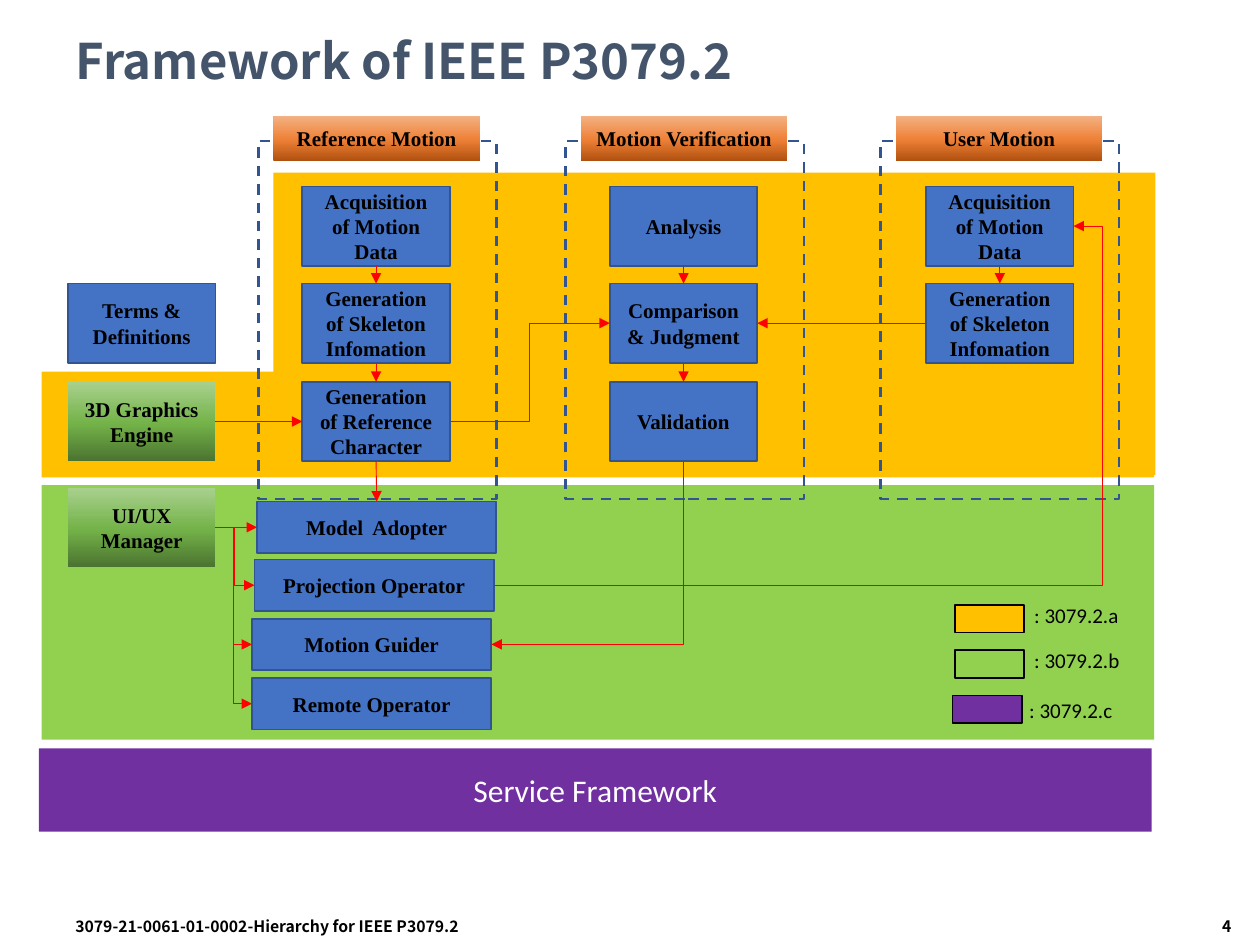
from copy import deepcopy
from dataclasses import dataclass

from lxml import etree
from pptx import Presentation
from pptx.dml.color import RGBColor
from pptx.enum.dml import MSO_LINE
from pptx.enum.shapes import MSO_CONNECTOR as CONN, MSO_SHAPE as SHAPE
from pptx.enum.text import MSO_ANCHOR as ANCHOR, PP_ALIGN as ALIGN
from pptx.oxml.ns import qn
from pptx.util import Inches, Pt

SERIF, SANS, CJK = "Times New Roman", "Calibri", "Noto Sans CJK KR"
AMBER, LIME, PURPLE, BLUE, NAVY = "FFC000", "92D050", "7030A0", "4472C4", "325491"
BLACK, WHITE, RED, SLATE = "000000", "FFFFFF", "FF0000", "44546A"
GREEN_FADE = ("4B7430", "74B349", "A9D18E")
ORANGE_FADE = ("B0500F", "EE8137", "F4B183")
TOP, LEFT, BOTTOM, RIGHT = range(4)

# Columns and rows of the diagram
SIDE, REF, VERIFY, USER = 0.54, 2.4, 4.84, 7.35
ROWS = (1.48, 2.25, 3.03)
STEP_W, STEP_H = 1.17, 0.63
OP_W, OP_H = 1.9, 0.41


@dataclass
class Box:
    key: str
    text: str
    x: float
    y: float
    w: float = STEP_W
    h: float = STEP_H
    fade: tuple = ()


@dataclass
class Link:
    start: str
    out: int
    end: str
    into: int
    bent: bool = False
    bend: float = 0.5


BOXES = [
    Box("terms", "Terms & Definitions", SIDE, ROWS[1]),
    Box("engine", "3D Graphics Engine", SIDE, ROWS[2], fade=GREEN_FADE),
    Box("manager", "UI/UX Manager", SIDE, 3.87, fade=GREEN_FADE),
    Box("ref data", "Acquisition of Motion Data", REF, ROWS[0]),
    Box("ref bones", "Generation of Skeleton Infomation", REF, ROWS[1]),
    Box("figure", "Generation of Reference Character", REF, ROWS[2]),
    Box("study", "Analysis", VERIFY, ROWS[0]),
    Box("judge", "Comparison & Judgment", VERIFY, ROWS[1]),
    Box("valid", "Validation", VERIFY, ROWS[2]),
    Box("user data", "Acquisition of Motion Data", USER, ROWS[0]),
    Box("user bones", "Generation of Skeleton Infomation", USER, ROWS[1]),
    Box("model", "Model  Adopter", 2.04, 3.98, OP_W, OP_H),
    Box("project", "Projection Operator", 2.02, 4.44, OP_W, OP_H),
    Box("guide", "Motion Guider", 2, 4.91, OP_W, OP_H),
    Box("remote", "Remote Operator", 2, 5.38, OP_W, OP_H),
]
LINKS = [
    Link("ref data", BOTTOM, "ref bones", TOP),
    Link("ref bones", BOTTOM, "figure", TOP),
    Link("figure", BOTTOM, "model", TOP),
    Link("study", BOTTOM, "judge", TOP),
    Link("judge", BOTTOM, "valid", TOP),
    Link("user data", BOTTOM, "user bones", TOP),
    Link("user bones", LEFT, "judge", RIGHT),
    Link("engine", RIGHT, "figure", LEFT),
    Link("manager", RIGHT, "model", LEFT),
    Link("manager", RIGHT, "project", LEFT, True),
    Link("manager", RIGHT, "guide", LEFT, True),
    Link("manager", RIGHT, "remote", LEFT, True),
    Link("figure", RIGHT, "judge", LEFT, True),
    Link("project", RIGHT, "user data", RIGHT, True, 1.05),
]
HEADS = [("Reference Motion", 2.17, 2.05), ("Motion Verification", 4.61, 4.49),
         ("User Motion", 7.11, 6.99)]
KEYS = [(": 3079.2.a", AMBER, 7.58, 4.8, 8.11, 4.73),
        (": 3079.2.b", LIME, 7.58, 5.16, 8.11, 5.09),
        (": 3079.2.c", PURPLE, 7.56, 5.52, 8.07, 5.49)]

prs = Presentation()
prs.slide_width, prs.slide_height = Inches(10), Inches(7.5)
slide = prs.slides.add_slide(prs.slide_layouts[5])
shapes = slide.shapes


def rgb(code: str) -> RGBColor:
    return RGBColor.from_string(code)


def write(shape, text: str, size: float, face: str, color: str = BLACK,
          bold: bool = False, align=ALIGN.LEFT, anchor=ANCHOR.TOP) -> None:
    frame = shape.text_frame
    frame.text, frame.word_wrap, frame.vertical_anchor = text, True, anchor
    para = frame.paragraphs[0]
    para.alignment = align
    font = para.runs[0].font
    font.size, font.name, font.bold = Pt(size), face, bold
    font.color.rgb = rgb(color)
    if face == CJK:
        props = para.runs[0].font._element
        etree.SubElement(props, qn("a:ea")).set("typeface", face)


def label(text: str, x: float, y: float, w: float, h: float, *style, **more) -> None:
    write(shapes.add_textbox(Inches(x), Inches(y), Inches(w), Inches(h)),
          text, *style, **more)


def rect(x: float, y: float, w: float, h: float, fill: str = "",
         line: str = "", weight: float = 1):
    shape = shapes.add_shape(SHAPE.RECTANGLE, Inches(x), Inches(y), Inches(w), Inches(h))
    shape.shadow.inherit = False
    if fill:
        shape.fill.solid()
        shape.fill.fore_color.rgb = rgb(fill)
    else:
        shape.fill.background()
    if line:
        shape.line.color.rgb = rgb(line)
        shape.line.width = Pt(weight)
    else:
        shape.line.fill.background()
    return shape


def shade(shape, colors: tuple) -> None:
    """Fill the shape with three colours, from the bottom up."""
    shape.fill.gradient()
    shape.fill.gradient_angle = 90
    stops = shape._element.spPr.find(".//" + qn("a:gsLst"))
    stops.insert(1, deepcopy(stops[0]))
    for stop, color, place in zip(shape.fill.gradient_stops, colors, (0, 0.48, 1)):
        stop.color.rgb, stop.position = rgb(color), place


def block(box: Box):
    plain = not box.fade
    shape = rect(box.x, box.y, box.w, box.h, BLUE if plain else "", NAVY if plain else "")
    if box.fade:
        shade(shape, box.fade)
    write(shape, box.text, 12, SERIF, bold=True, align=ALIGN.CENTER, anchor=ANCHOR.MIDDLE)
    return shape


def join(link: Link, made: dict, tip: str = "a:tailEnd"):
    wire = shapes.add_connector(CONN.ELBOW if link.bent else CONN.STRAIGHT, 0, 0, 0, 0)
    wire.begin_connect(made[link.start], link.out)
    wire.end_connect(made[link.end], link.into)
    wire.line.color.rgb, wire.line.width = rgb(RED), Pt(0.5)
    props = wire._element.spPr
    etree.SubElement(props.find(qn("a:ln")), qn(tip)).set("type", "triangle")
    etree.SubElement(props, qn("a:effectLst"))
    if link.bend != 0.5:
        guide = etree.SubElement(props.find(".//" + qn("a:avLst")), qn("a:gd"))
        guide.set("name", "adj1")
        guide.set("fmla", f"val {round(link.bend * 100000)}")
    return wire


title = shapes.title
title.left, title.top, title.width, title.height = map(Inches, (0.5, 0.17, 9, 0.67))
write(title, "Framework of IEEE P3079.2", 28, CJK, SLATE, True, anchor=ANCHOR.MIDDLE)
title.text_frame.paragraphs[0].line_spacing = 0.9

rect(0.33, 3.85, 8.83, 2.02, LIME)
rect(0.33, 2.95, 8.83, 0.84, AMBER)
rect(2.17, 1.37, 7, 2.4, AMBER)

for text, x, frame_x in HEADS:
    rect(frame_x, 1.12, 1.89, 2.84, line=NAVY, weight=1.5).line.dash_style = MSO_LINE.DASH
    block(Box(text, text, x, 0.92, 1.64, 0.36, ORANGE_FADE))

made = {box.key: block(box) for box in BOXES}
for link in LINKS:
    join(link, made)
# A single corner, with the arrowhead at the guider
corner = join(Link("guide", RIGHT, "valid", BOTTOM, True), made, "a:headEnd")
corner._element.spPr.find(qn("a:prstGeom")).set("prst", "bentConnector2")

service = rect(0.31, 5.94, 8.83, 0.66, PURPLE)
write(service, "Service Framework", 18, SANS, WHITE, align=ALIGN.CENTER, anchor=ANCHOR.MIDDLE)

for text, fill, x, y, text_x, text_y in KEYS:
    rect(x, y, 0.55, 0.22, fill, BLACK)
    label(text, text_x, text_y, 1.08, 0.3, 12, SANS)

label("3079-21-0061-01-0002-Hierarchy for IEEE P3079.2", 0.5, 7.23, 5.33, 0.27,
      9, CJK, bold=True)
label("4", 8.25, 7.23, 1.62, 0.27, 9, CJK, bold=True, align=ALIGN.RIGHT)

prs.save("out.pptx")
